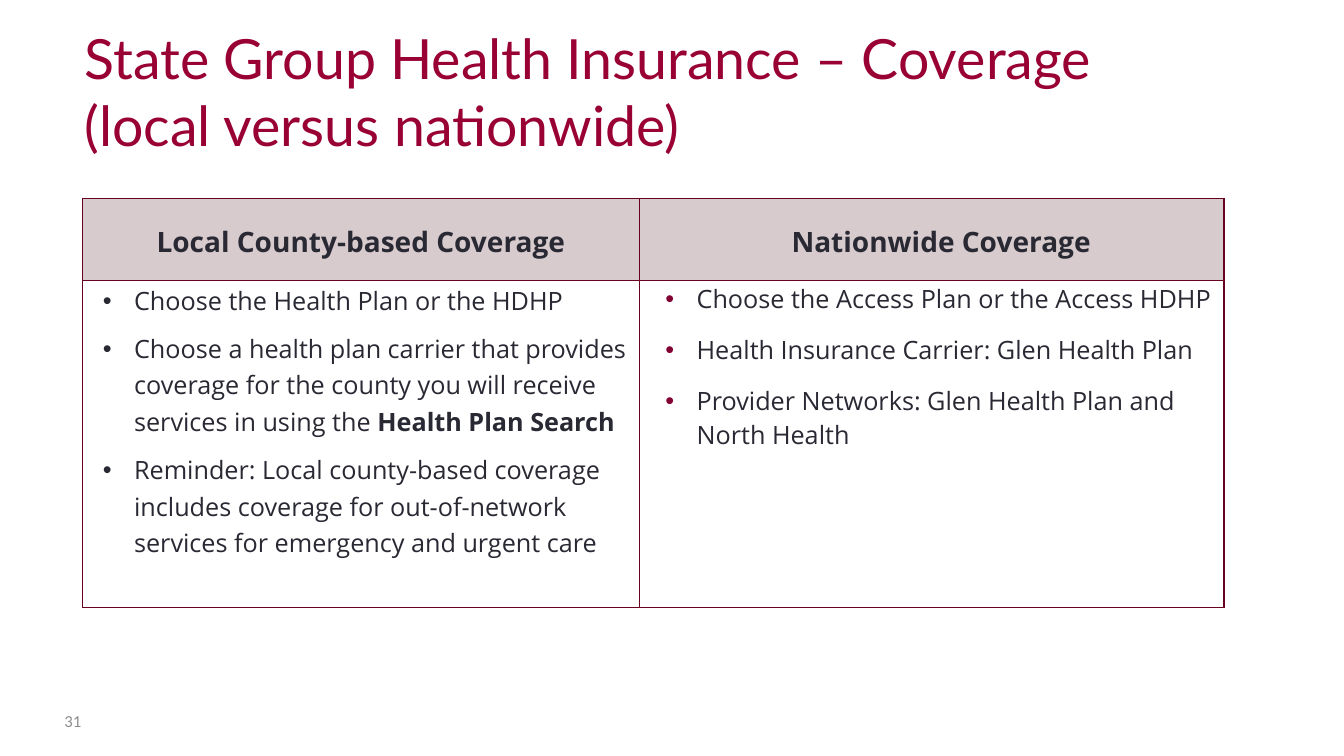
from lxml import etree
from pptx import Presentation
from pptx.dml.color import RGBColor
from pptx.enum.text import MSO_ANCHOR as Anchor, PP_ALIGN as Align
from pptx.oxml.ns import qn
from pptx.util import Inches, Pt

# Content
TITLE = "State Group Health Insurance – Coverage\v(local versus nationwide)"
NUMBER = "31"
HEADS = ["Local County-based Coverage", "Nationwide Coverage"]
# Each point is a list of (words, bold) runs
LOCAL = [
    [("Choose the Health Plan or the HDHP", False)],
    [("Choose a health plan carrier that provides coverage for the county "
      "you will receive services in using the ", False),
     ("Health Plan Search", True)],
    [("Reminder: Local county-based coverage includes coverage for "
      "out-of-network services for emergency and urgent care", False)],
]
NATION = [
    [("Choose the Access Plan or the Access HDHP", False)],
    [("Health Insurance Carrier: Glen Health Plan", False)],
    [("Provider Networks: Glen Health Plan and North Health", False)],
]
COLS, ROWS = [5.52, 5.8], [0.81, 3.25]
HUES = {"title": "990033", "ink": "292934", "page": "8E8E90",
        "head": "D8CBCD", "edge": "68001F", "dot": "820032"}


def write(para, runs, font="Open Sans", size=18, hue="ink", align=Align.LEFT,
          line=1.0, before=0, after=0, left=0, hang=0, dot=None):
    """Fill one paragraph with (words, bold) runs."""
    para.alignment, para.line_spacing = align, line
    para.space_before, para.space_after = Pt(before), Pt(after)
    props = para._p.get_or_add_pPr()
    props.set("marL", str(Inches(left)))
    props.set("indent", str(Inches(-hang)))
    if dot:
        tint = etree.SubElement(props, qn("a:buClr"))
        etree.SubElement(tint, qn("a:srgbClr"), val=HUES[dot])
        etree.SubElement(props, qn("a:buFont"), typeface="Arial")
        etree.SubElement(props, qn("a:buChar"), char="•")
    for words, bold in runs:
        for i, part in enumerate(words.split("\v")):
            if i:
                para.add_line_break()
            run = para.add_run()
            run.text = part
            run.font.name, run.font.size, run.font.bold = font, Pt(size), bold
            run.font.color.rgb = RGBColor.from_string(HUES[hue])


def label(slide, box, words, anchor, **form):
    """Add a text box with a single paragraph."""
    frame = slide.shapes.add_textbox(*map(Inches, box)).text_frame
    frame.word_wrap, frame.vertical_anchor = True, anchor
    write(frame.paragraphs[0], [(words, False)], **form)


def style(cell, fill=None):
    """Set margins, borders and fill of a table cell."""
    cell.margin_left = cell.margin_right = Inches(0.07)
    cell.margin_top, cell.margin_bottom = Inches(0.01), 0
    props = cell._tc.get_or_add_tcPr()
    for side in ("lnL", "lnR", "lnT", "lnB"):
        edge = etree.SubElement(props, qn("a:" + side), w=str(Pt(1)))
        solid = etree.SubElement(edge, qn("a:solidFill"))
        etree.SubElement(solid, qn("a:srgbClr"), val=HUES["edge"])
    if fill:
        cell.fill.solid()
        cell.fill.fore_color.rgb = RGBColor.from_string(HUES[fill])
    else:
        cell.fill.background()


def main():
    deck = Presentation()
    deck.slide_width, deck.slide_height = Inches(13.33), Inches(7.5)
    slide = deck.slides.add_slide(deck.slide_layouts[6])

    # Title and page number
    label(slide, (0.74, 0.36, 11.94, 1.25), TITLE, Anchor.BOTTOM,
          font="Lato", size=39.6, hue="title")
    label(slide, (0.54, 6.95, 0.56, 0.4), NUMBER, Anchor.MIDDLE,
          font="Calibri", size=12, hue="page")

    # Table grid
    table = slide.shapes.add_table(
        2, 2, Inches(0.82), Inches(1.97),
        Inches(sum(COLS)), Inches(sum(ROWS))).table
    table.first_row = table.horz_banding = False
    for col, wide in zip(table.columns, COLS):
        col.width = Inches(wide)
    for row, high in zip(table.rows, ROWS):
        row.height = Inches(high)

    # Header row
    for c, (head, left) in enumerate(zip(HEADS, (0, 0.19))):
        cell = table.cell(0, c)
        style(cell, "head")
        cell.vertical_anchor = Anchor.MIDDLE
        write(cell.text_frame.paragraphs[0], [(head, True)], size=20,
              align=Align.CENTER, line=1.07, after=8, left=left)

    # Bullet lists
    forms = [dict(line=1.07, after=8, left=0.44, dot="ink"),
             dict(after=6, left=0.5, dot="dot")]
    gaps = [0, 6]
    for c, points in enumerate((LOCAL, NATION)):
        cell = table.cell(1, c)
        style(cell)
        frame = cell.text_frame
        for i, runs in enumerate(points):
            para = frame.add_paragraph() if i else frame.paragraphs[0]
            write(para, runs, hang=0.31, before=gaps[c] if i else 0,
                  **forms[c])

    deck.save("out.pptx")


if __name__ == "__main__":
    main()
